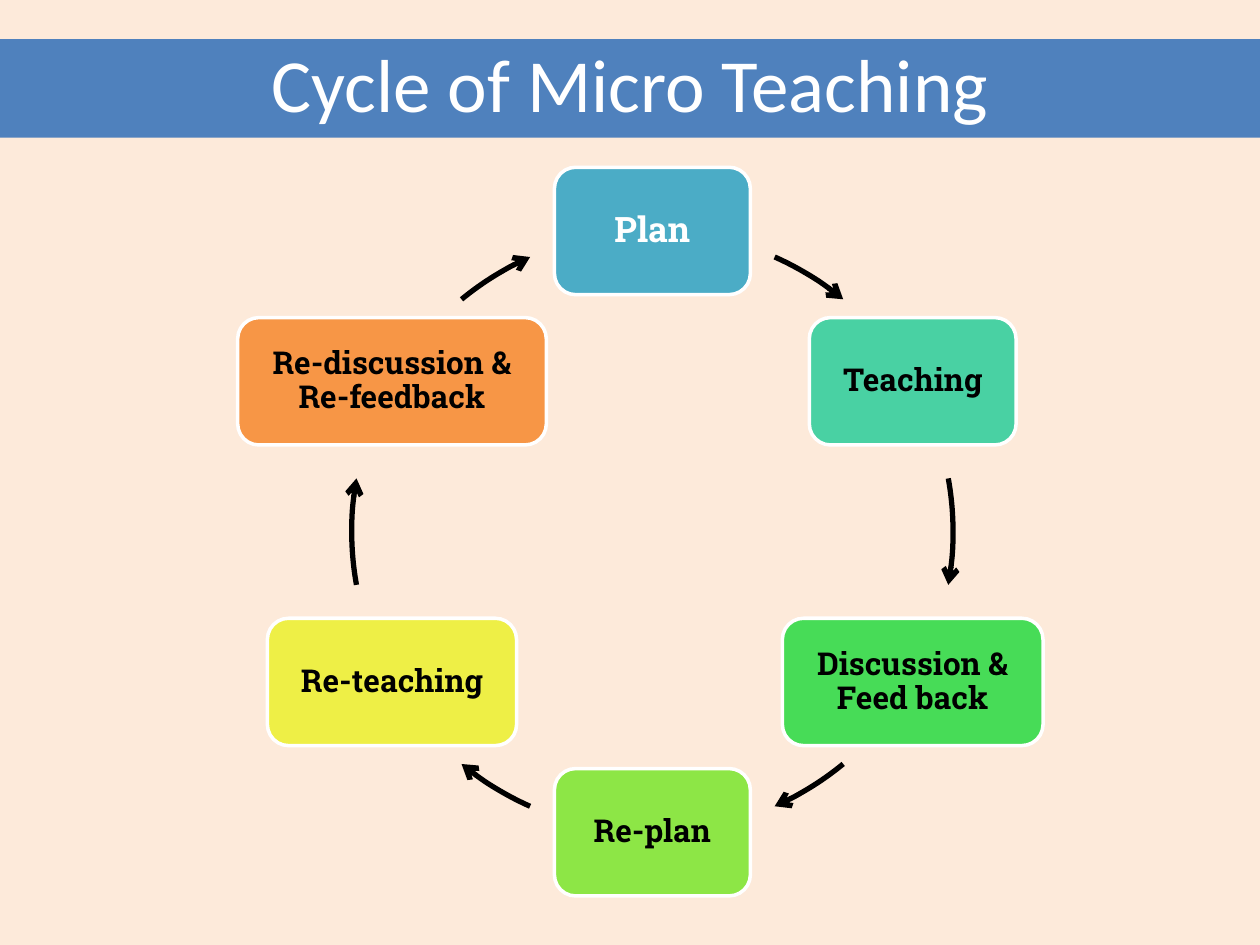
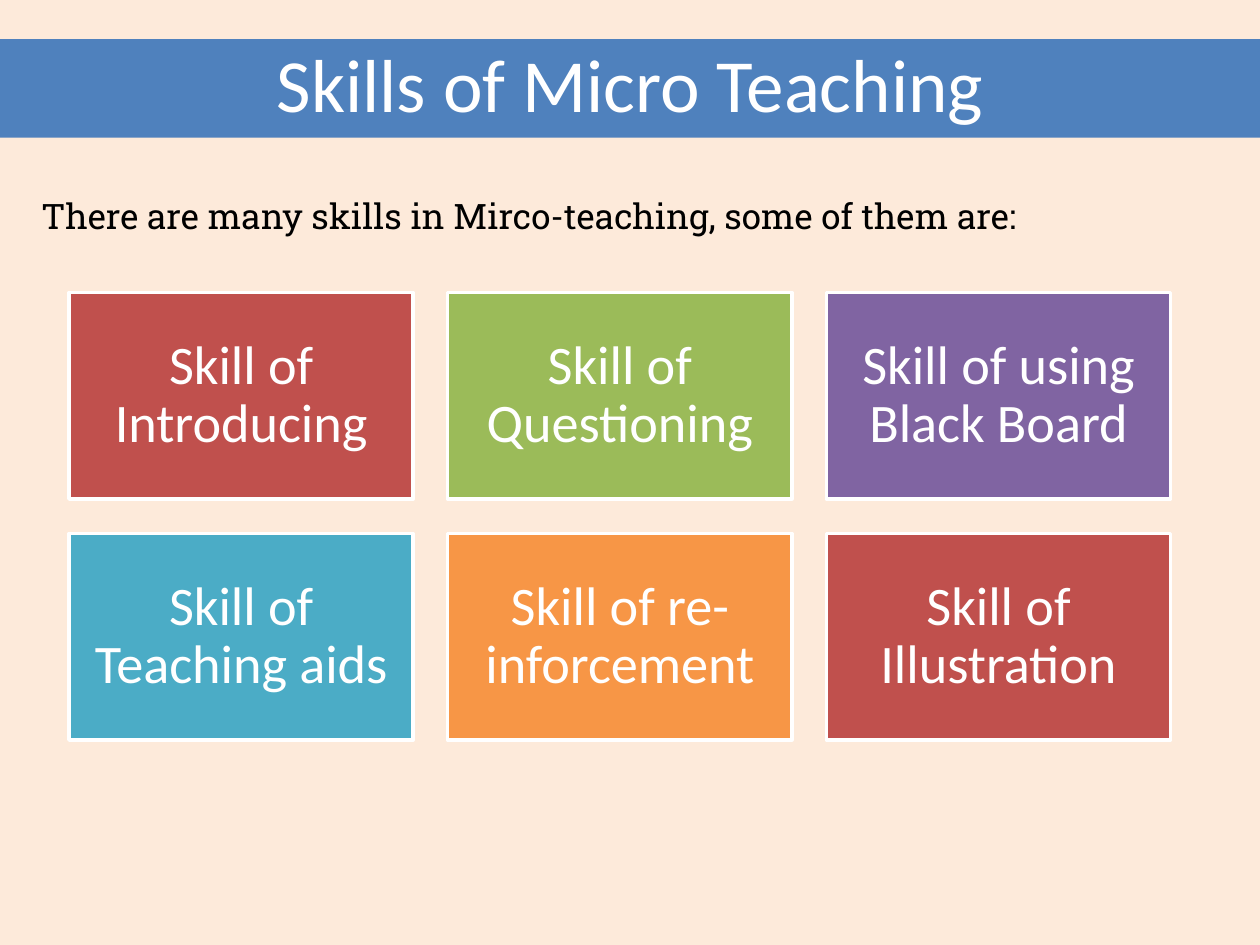
import math

from lxml import etree
from pptx import Presentation
from pptx.dml.color import RGBColor
from pptx.enum import shapes, text
from pptx.oxml import ns
from pptx.util import Pt

CREAM = RGBColor(0xFD, 0xEA, 0xDA)
WHITE = RGBColor(0xFF, 0xFF, 0xFF)
BLACK = RGBColor(0, 0, 0)
BLUE = RGBColor(0x4F, 0x81, 0xBD)
RED = RGBColor(0xC0, 0x50, 0x4D)
OLIVE = RGBColor(0x9B, 0xBB, 0x59)
PURPLE = RGBColor(0x80, 0x64, 0xA2)
AQUA = RGBColor(0x4B, 0xAC, 0xC6)
ORANGE = RGBColor(0xF7, 0x96, 0x46)
MINT = RGBColor(0x49, 0xD1, 0xA3)
GREEN = RGBColor(0x47, 0xDC, 0x57)
LIME = RGBColor(0x8D, 0xE6, 0x46)
YELLOW = RGBColor(0xEE, 0xEF, 0x46)

SANS = "Calibri"
SLAB = "Roboto Slab"
PAGE_WIDTH, PAGE_HEIGHT = 720, 540


def write(box, words, *, size, font=SANS, color=WHITE, bold=False, spacing=0.9,
          before=0, align=text.PP_ALIGN.CENTER, anchor=text.MSO_ANCHOR.MIDDLE,
          inset=None):
    """Put one formatted paragraph into a shape or text box."""
    frame = box.text_frame
    frame.word_wrap = True
    frame.vertical_anchor = anchor
    if inset is not None:
        frame.margin_left = frame.margin_right = Pt(inset)
        frame.margin_top = frame.margin_bottom = Pt(inset)
    para = frame.paragraphs[0]
    para.alignment = align
    para.line_spacing = spacing
    para.space_before = Pt(before)
    span = para.add_run()
    span.text = words
    span.font.name = font
    span.font.size = Pt(size)
    span.font.bold = bold
    span.font.color.rgb = color


class Builder:
    """Holds the deck, its shared style and the current slide."""

    def __init__(self):
        self.deck = Presentation()
        self.deck.slide_width = Pt(PAGE_WIDTH)
        self.deck.slide_height = Pt(PAGE_HEIGHT)
        self.page = None

    def start_page(self, title):
        self.page = self.deck.slides.add_slide(self.deck.slide_layouts[6])
        self.page.background.fill.solid()
        self.page.background.fill.fore_color.rgb = CREAM
        band = self.card(0, 22.4, PAGE_WIDTH, 56.2, BLUE, outline=None)
        write(band, title, size=42.9)

    def card(self, left, top, width, height, fill, outline=WHITE,
             kind=shapes.MSO_SHAPE.RECTANGLE):
        box = self.page.shapes.add_shape(
            kind, Pt(left), Pt(top), Pt(width), Pt(height))
        box.shadow.inherit = False
        box.fill.solid()
        box.fill.fore_color.rgb = fill
        if outline is None:
            box.line.fill.background()
        else:
            box.line.color.rgb = outline
            box.line.width = Pt(2)
        return box

    def arc_arrow(self, center_x, center_y, radius, start, end):
        """Draw a clockwise arc; angles are degrees from three o'clock."""
        arc = self.page.shapes.add_shape(
            shapes.MSO_SHAPE.ARC, Pt(center_x - radius), Pt(center_y - radius),
            Pt(2 * radius), Pt(2 * radius))
        arc.shadow.inherit = False
        # Angles are stored as 60000ths of a degree, adjustments as 100000ths
        arc.adjustments[0] = start % 360 * 0.6
        arc.adjustments[1] = end % 360 * 0.6
        arc.fill.background()
        arc.line.color.rgb = BLACK
        arc.line.width = Pt(3)
        line = arc.element.spPr.find(ns.qn("a:ln"))
        etree.SubElement(line, ns.qn("a:tailEnd"), type="arrow")

    def note(self, left, top, width, height, words, **style):
        box = self.page.shapes.add_textbox(
            Pt(left), Pt(top), Pt(width), Pt(height))
        write(box, words, **style)


def cycle_page(build):
    build.start_page("Cycle of Micro Teaching")
    center_x, center_y, radius = 372.8, 303.8, 171.8
    step_height = 72.8
    # Label, width, fill, text colour, text size; clockwise from the top
    steps = [
        ("Plan", 112, AQUA, WHITE, 20),
        ("Teaching", 118.2, MINT, BLACK, 18),
        ("Discussion & Feed back", 149, GREEN, BLACK, 18),
        ("Re-plan", 112, LIME, BLACK, 18),
        ("Re-teaching", 142.4, YELLOW, BLACK, 18),
        ("Re-discussion & Re-feedback", 176.4, ORANGE, BLACK, 18),
    ]
    # Start and end of the arrow that leaves each step, from twelve o'clock
    arrows = [(24, 39.4), (79.8, 100.2), (140.6, 156),
              (204, 219.4), (259.8, 280.2), (320.6, 336)]
    turn = 360 / len(steps)
    for index, (label, width, fill, color, size) in enumerate(steps):
        angle = math.radians(index * turn - 90)
        step = build.card(
            center_x + radius * math.cos(angle) - width / 2,
            center_y + radius * math.sin(angle) - step_height / 2,
            width, step_height, fill,
            kind=shapes.MSO_SHAPE.ROUNDED_RECTANGLE)
        write(step, label, size=size, font=SLAB, color=color, bold=True, inset=5)
        start, end = arrows[index]
        build.arc_arrow(center_x, center_y, radius, start - 90, end - 90)


def skills_page(build):
    build.start_page("Skills of Micro Teaching")
    # Grid of skills
    skills = [
        ("Skill of Introducing", RED),
        ("Skill of Questioning", OLIVE),
        ("Skill of using Black Board", PURPLE),
        ("Skill of Teaching aids", AQUA),
        ("Skill of re-inforcement", ORANGE),
        ("Skill of Illustration", RED),
    ]
    left, top, width, height, gap, columns = 39.4, 167.2, 196.7, 118, 19.7, 3
    for index, (label, fill) in enumerate(skills):
        row, column = divmod(index, columns)
        tile = build.card(left + column * (width + gap),
                          top + row * (height + gap), width, height, fill)
        write(tile, label, size=31, inset=9.3)
    # Lead-in
    build.note(16.6, 95.8, 675.4, 45.4,
               "There are many skills in Mirco-teaching, some of them are:",
               size=20, font=SLAB, color=BLACK, spacing=1.5, before=4,
               align=text.PP_ALIGN.LEFT, anchor=text.MSO_ANCHOR.TOP)


def main():
    build = Builder()
    cycle_page(build)
    skills_page(build)
    build.deck.save("out.pptx")


if __name__ == "__main__":
    main()
